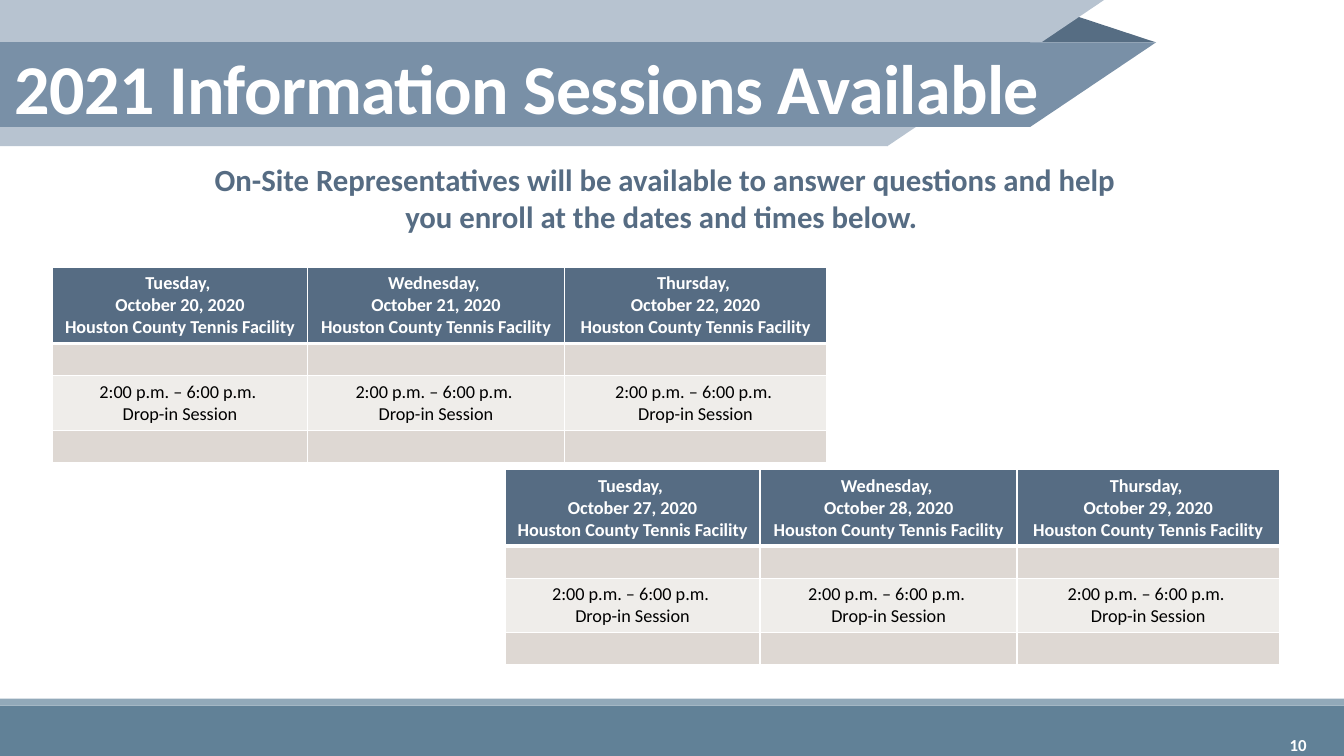
"""Build the slide that lists the 2021 information sessions."""
from dataclasses import dataclass

from lxml import etree
from pptx import Presentation
from pptx.dml.color import RGBColor
from pptx.enum.shapes import MSO_SHAPE
from pptx.enum.text import MSO_ANCHOR, PP_ALIGN
from pptx.oxml.ns import qn
from pptx.util import Pt

RECT, RIGHT_TRI, TRI = MSO_SHAPE.RECTANGLE, MSO_SHAPE.RIGHT_TRIANGLE, MSO_SHAPE.ISOSCELES_TRIANGLE
TOP, MIDDLE = MSO_ANCHOR.TOP, MSO_ANCHOR.MIDDLE
LEFT, CENTER, RIGHT = PP_ALIGN.LEFT, PP_ALIGN.CENTER, PP_ALIGN.RIGHT


@dataclass(frozen=True)
class Theme:
    font: str = "Calibri"
    white: str = "FFFFFF"
    black: str = "000000"
    foot: str = "618197"
    stripe: str = "92A9B9"
    fold: str = "566D83"
    pale: str = "B7C3D0"
    band: str = "7990A7"
    navy: str = "566C83"
    sand: str = "DED8D3"
    cream: str = "EFEDEA"
    title: float = 50
    lead: float = 22
    cell: float = 13
    page: float = 12


theme = Theme()


def write(frame, lines, size, color, bold, align, anchor):
    frame.word_wrap = True
    frame.vertical_anchor = anchor
    for i, line in enumerate(lines):
        para = frame.paragraphs[0] if i == 0 else frame.add_paragraph()
        para.alignment = align
        run = para.add_run()
        run.text = line
        run.font.color.rgb = RGBColor.from_string(color)
        style = {"name": theme.font, "size": Pt(size), "bold": bold}
        for key, value in style.items():
            setattr(run.font, key, value)


def edge(cell, widths):
    props = cell._tc.get_or_add_tcPr()
    for i, (side, width) in enumerate(zip("LRTB", widths)):
        line = etree.Element(qn(f"a:ln{side}"), w=str(Pt(width)))
        fill = etree.SubElement(line, qn("a:solidFill"))
        etree.SubElement(fill, qn("a:srgbClr"), val=theme.white)
        props.insert(i, line)


prs = Presentation()
prs.slide_width, prs.slide_height = Pt(960), Pt(540)
slide = prs.slides.add_slide(prs.slide_layouts[6])
shapes = slide.shapes

banner = [
    (RECT, theme.foot, (0, 504, 960, 36)),
    (RECT, theme.stripe, (0, 499, 960, 5)),
    (TRI, theme.fold, (735.1, 10.1, 90.7, 20.2)),
    (RECT, theme.pale, (0, 0, 634.3, 104.4)),
    (RIGHT_TRI, theme.pale, (633.8, 0, 154.8, 104.4)),
    (RECT, theme.band, (0, 30.2, 735.8, 60.5)),
    (RIGHT_TRI, theme.band, (735.8, 30.2, 90, 60.5)),
]
for kind, color, box in banner:
    shape = shapes.add_shape(kind, *map(Pt, box))
    shape.shadow.inherit = False
    shape.fill.solid()
    shape.fill.fore_color.rgb = RGBColor.from_string(color)
    shape.line.fill.background()
    if kind == TRI:
        shape.adjustments[0] = 0.324
    if kind == RIGHT_TRI:
        shape.rotation = 180
        shape._element.spPr.find(qn("a:xfrm")).set("flipH", "1")

lead = ("On-Site Representatives will be available to answer questions "
        "and help you enroll at the dates and times below. ")
texts = [
    (lead, (138.2, 111.6, 673.2, 60.5), theme.lead, theme.navy, CENTER, TOP),
    ("2021 Information Sessions Available", (3.6, 37.4, 879.1, 77), theme.title, theme.white, LEFT, TOP),
    ("10", (837.4, 517.7, 103, 28.8), theme.page, theme.white, RIGHT, MIDDLE),
]
for text, box, size, color, align, anchor in texts:
    frame = shapes.add_textbox(*map(Pt, box)).text_frame
    write(frame, [text], size, color, True, align, anchor)
    if size == theme.title:
        para = frame.paragraphs[0]
        para.line_spacing = 0.85
        para.runs[0].font._element.set("spc", "-50")

days = ["Tuesday", "Wednesday", "Thursday"]
place = "Houston County Tennis Facility"
slot = ["2:00 p.m. – 6:00 p.m. ", "Drop-in Session"]
cols = [182.2, 183.6, 187.2]
rows = [54.5, 23, 39, 23]
fills = [theme.navy, theme.sand, theme.cream, theme.sand]
weeks = [(20, 37.4, 190.8), (27, 360.7, 335.5)]

for first, left, top in weeks:
    box = (left, top, sum(cols), sum(rows))
    table = shapes.add_table(len(rows), len(cols), *map(Pt, box)).table
    table.first_row = table.horz_banding = False
    for c, width in enumerate(cols):
        table.columns[c].width = Pt(width)
    for r, height in enumerate(rows):
        table.rows[r].height = Pt(height)
        for c, day in enumerate(days):
            cell = table.cell(r, c)
            cell.fill.solid()
            cell.fill.fore_color.rgb = RGBColor.from_string(fills[r])
            edge(cell, (1, 1, 3 if r == 1 else 1, 3 if r == 0 else 1))
            if r == 0:
                head = [f"{day}, ", f"October {first + c}, 2020", place]
                write(cell.text_frame, head, theme.cell, theme.white, True, CENTER, TOP)
            elif r == 2:
                write(cell.text_frame, slot, theme.cell, theme.black, False, CENTER, MIDDLE)
                cell.vertical_anchor = MIDDLE
            else:
                para = cell.text_frame.paragraphs[0]
                etree.SubElement(para._p, qn("a:endParaRPr"), sz=str(theme.cell * 100))

prs.save("out.pptx")
